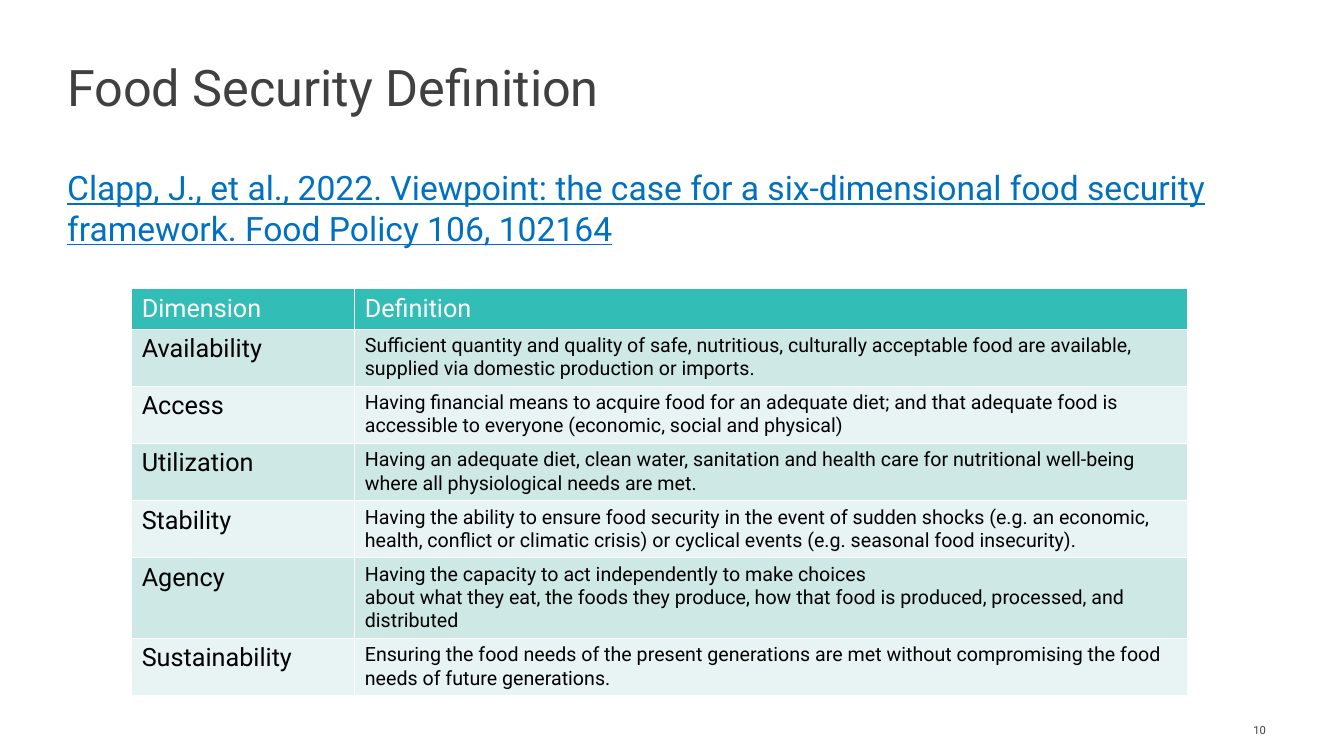
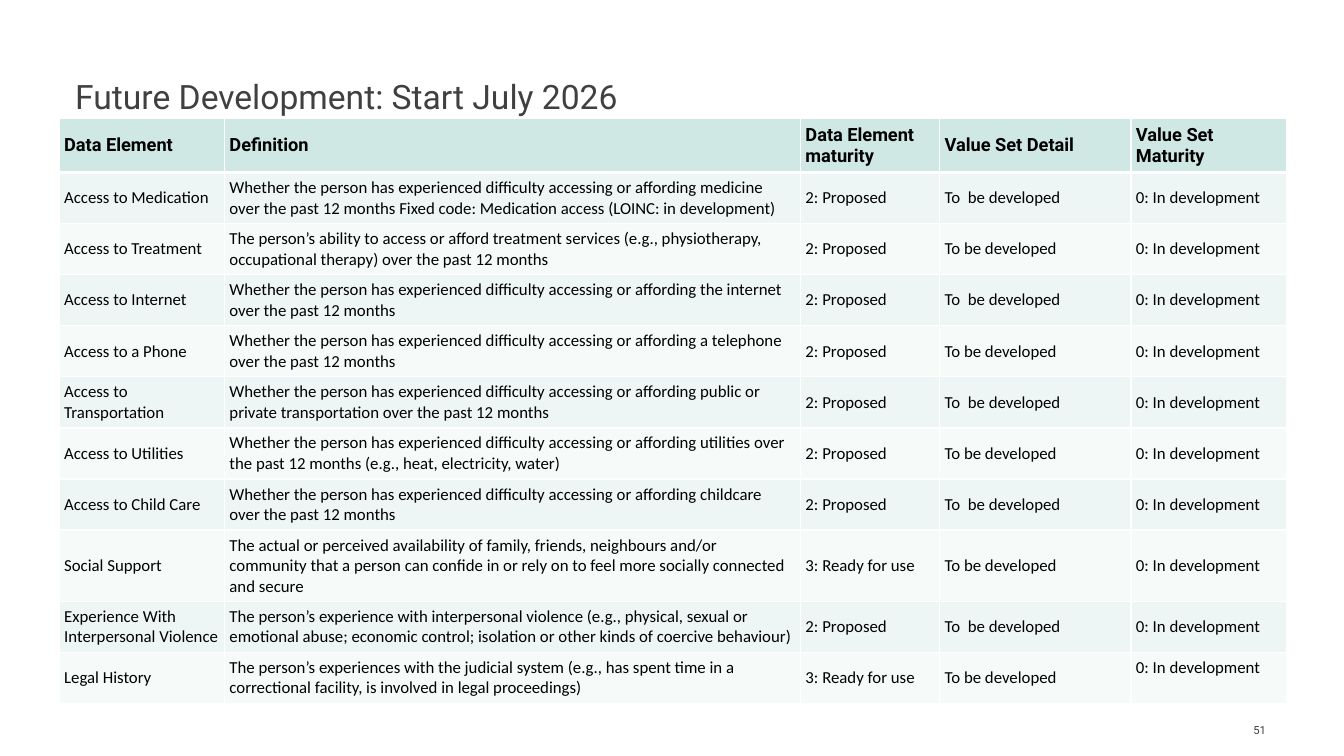
from dataclasses import dataclass
from typing import Any

from lxml.etree import SubElement
from pptx import Presentation
from pptx.dml.color import RGBColor
from pptx.enum.text import MSO_ANCHOR, PP_ALIGN
from pptx.oxml.ns import qn
from pptx.util import Inches, Pt

WIDE, HIGH = Inches(13.33), Inches(7.5)
WHITE, BLACK, GREY, BLUE = "FFFFFF", "000000", "404040", "0070C0"
MAIN, PLAIN = "Roboto", "Calibri"


@dataclass(frozen=True)
class Face:
    size: float
    name: str = MAIN
    color: str = BLACK
    bold: bool = False
    underline: bool = False


@dataclass(frozen=True)
class Box:
    left: float
    top: float
    width: float
    height: float


@dataclass(frozen=True)
class Grid:
    left: float
    top: float
    cols: list[float]
    rows: list[float]
    fills: tuple[str, str, str]
    head: Face
    faces: list[Face]
    pad: tuple[float, float]
    anchor: Any
    rule: float


TITLE = Box(5, 8, 90, 7.5)
BODY = Box(5, 22.13, 90, 10.8)
PAGE = Box(89.5, 95.7, 4.7, 1.8)


def across(share: float) -> int:
    return round(WIDE * share / 100)


def down(share: float) -> int:
    return round(HIGH * share / 100)


def paint(code: str) -> RGBColor:
    return RGBColor.from_string(code)


def apply(item: Any, values: dict[str, Any]) -> None:
    for key, value in values.items():
        setattr(item, key, value)


def write(frame: Any, text: str, face: Face, **form: Any) -> None:
    for index, line in enumerate(text.split("\n")):
        para = frame.add_paragraph() if index else frame.paragraphs[0]
        apply(para, form)
        run = para.add_run()
        run.text = line
        apply(run.font, {"name": face.name, "size": Pt(face.size),
                         "bold": face.bold, "underline": face.underline})
        run.font.color.rgb = paint(face.color)


def label(slide: Any, box: Box, text: str, face: Face, inset: float = 0,
          anchor: Any = MSO_ANCHOR.TOP, **form: Any) -> None:
    shape = slide.shapes.add_textbox(across(box.left), down(box.top),
                                     across(box.width), down(box.height))
    frame = shape.text_frame
    apply(frame, {"word_wrap": True, "margin_left": across(inset), "margin_right": 0,
                  "margin_top": 0, "margin_bottom": 0, "vertical_anchor": anchor})
    write(frame, text, face, **form)


def edge(cell: Any, sides: dict[str, float]) -> None:
    props = cell._tc.get_or_add_tcPr()
    for side, width in sides.items():
        line = SubElement(props, qn(f"a:ln{side}"), w=str(Pt(width)))
        fill = SubElement(line, qn("a:solidFill"))
        SubElement(fill, qn("a:srgbClr"), val=WHITE)


def tabulate(slide: Any, grid: Grid, data: list[tuple[str, ...]]) -> Any:
    shape = slide.shapes.add_table(len(data), len(grid.cols), across(grid.left),
                                   down(grid.top), across(sum(grid.cols)),
                                   down(sum(grid.rows)))
    table = shape.table
    table.horz_banding = False
    for col, share in zip(table.columns, grid.cols):
        col.width = across(share)
    for row, share in zip(table.rows, grid.rows):
        row.height = down(share)
    side, end = map(Inches, grid.pad)
    for r, words in enumerate(data):
        for c, text in enumerate(words):
            cell = table.cell(r, c)
            edge(cell, {"L": 1, "R": 1, "T": grid.rule if r == 1 else 1,
                        "B": 1 if r else grid.rule})
            cell.fill.solid()
            tint = grid.fills[2 - r % 2] if r else grid.fills[0]
            cell.fill.fore_color.rgb = paint(tint)
            apply(cell, {"margin_left": side, "margin_right": side, "margin_top": end,
                         "margin_bottom": end, "vertical_anchor": grid.anchor})
            write(cell.text_frame, text, grid.faces[c] if r else grid.head)
    return table


def start(deck: Any, title: str, size: float, page: int, inset: float = 0) -> Any:
    slide = deck.slides.add_slide(deck.slide_layouts[6])
    label(slide, PAGE, str(page), Face(8, color=GREY), anchor=MSO_ANCHOR.MIDDLE,
          alignment=PP_ALIGN.RIGHT)
    label(slide, TITLE, title, Face(size, color=GREY), inset, line_spacing=Pt(40))
    return slide


FOOD = [
    ("Dimension", "Definition"),
    ("Availability", "Sufficient quantity and quality of safe, nutritious, culturally "
     "acceptable food are available, supplied via domestic production or imports."),
    ("Access", "Having financial means to acquire food for an adequate diet; and that "
     "adequate food is accessible to everyone (economic, social and physical)"),
    ("Utilization", "Having an adequate diet, clean water, sanitation and health care for "
     "nutritional well-being where all physiological needs are met."),
    ("Stability", "Having the ability to ensure food security in the event of sudden shocks "
     "(e.g. an economic, health, conflict or climatic crisis) or cyclical events "
     "(e.g. seasonal food insecurity)."),
    ("Agency", "Having the capacity to act independently to make choices\n"
     "about what they eat, the foods they produce, how that food is produced, "
     "processed, and distributed"),
    ("Sustainability", "Ensuring the food needs of the present generations are met without "
     "compromising the food needs of future generations."),
]

ASK = "Whether the person has experienced difficulty accessing or affording "
PAST = " over the past 12 months"
DRAFT, READY = "2: Proposed", "3: Ready for use"
HEADS = ("Data Element", "Definition", "Data Element maturity", "Value Set Detail",
         "Value Set Maturity")
NEEDS = [
    ("Access to Medication",
     f"{ASK}medicine{PAST} Fixed code: Medication access (LOINC: in development)", DRAFT),
    ("Access to Treatment", "The person’s ability to access or afford treatment services "
     f"(e.g., physiotherapy, occupational therapy){PAST}", DRAFT),
    ("Access to Internet", f"{ASK}the internet{PAST}", DRAFT),
    ("Access to a Phone", f"{ASK}a telephone{PAST}", DRAFT),
    ("Access to Transportation", f"{ASK}public or private transportation{PAST}", DRAFT),
    ("Access to Utilities", f"{ASK}utilities{PAST} (e.g., heat, electricity, water)", DRAFT),
    ("Access to Child Care", f"{ASK}childcare{PAST}", DRAFT),
    ("Social Support", "The actual or perceived availability of family, friends, neighbours "
     "and/or community that a person can confide in or rely on to feel more socially "
     "connected and secure", READY),
    ("Experience With Interpersonal Violence", "The person’s experience with interpersonal "
     "violence (e.g., physical, sexual or emotional abuse; economic control; isolation or "
     "other kinds of coercive behaviour)", DRAFT),
    ("Legal History", "The person’s experiences with the judicial system (e.g., has spent "
     "time in a correctional facility, is involved in legal proceedings)", READY),
]
DETAIL = ("To  be developed", "To be developed")

FOODS = Grid(9.8, 38.2, [16.6, 62], [5.2] + [7.5] * 4 + [10.5, 7.5],
             ("33BDB7", "CEE8E6", "E8F4F3"), Face(18, color=WHITE),
             [Face(18), Face(14)], (0.1, 0.05), MSO_ANCHOR.TOP, 1)
PLANS = Grid(4.4, 15.7, [12.3, 42.86, 10.36, 14.23, 11.6],
             [6.8] + [6.76] * 7 + [9.4] + [6.76] * 2,
             ("CFE8E3", "EDF6F4", "F6FBFA"), Face(13, bold=True),
             [Face(12, PLAIN)] * 5, (0.05, 0.05), MSO_ANCHOR.MIDDLE, 3)


def define(deck: Any) -> None:
    slide = start(deck, "Food Security Definition", 36, 10)
    label(slide, BODY, "Clapp, J., et al., 2022. Viewpoint: the case for a six-dimensional "
          "food security framework. Food Policy 106, 102164",
          Face(24, color=BLUE, underline=True))
    tabulate(slide, FOODS, FOOD)


def plan(deck: Any) -> None:
    slide = start(deck, "Future Development: Start July 2026", 24, 51, 0.6)
    rows = [(*need, DETAIL[i % 2], "0: In development") for i, need in enumerate(NEEDS)]
    table = tabulate(slide, PLANS, [HEADS, *rows])
    table.cell(len(rows), len(HEADS) - 1).vertical_anchor = MSO_ANCHOR.TOP


def main() -> None:
    deck = Presentation()
    apply(deck, {"slide_width": WIDE, "slide_height": HIGH})
    define(deck)
    plan(deck)
    deck.save("out.pptx")


if __name__ == "__main__":
    main()
